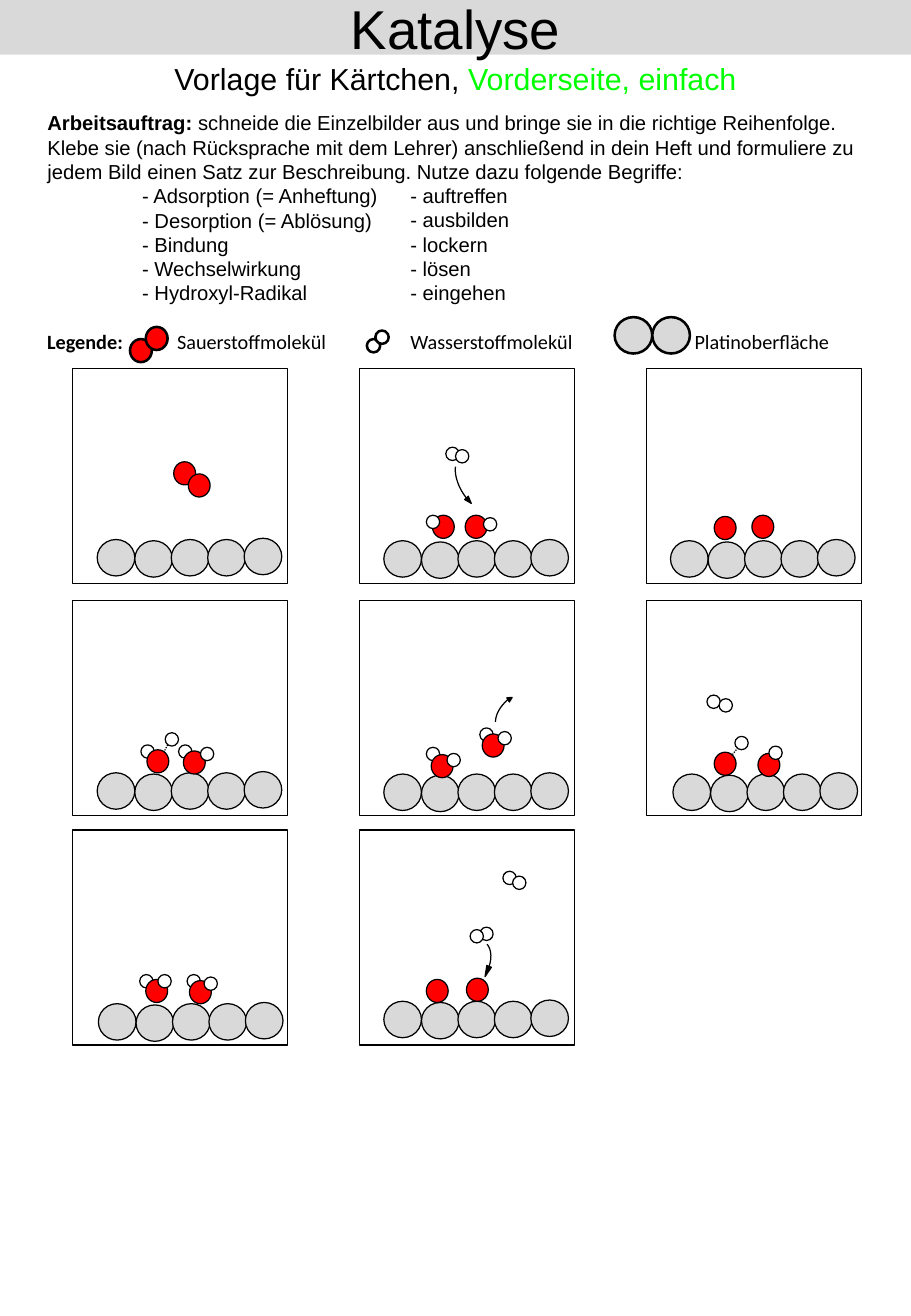
from pptx import Presentation
from pptx.dml.color import RGBColor
from pptx.enum.dml import MSO_LINE
from pptx.enum.shapes import MSO_CONNECTOR, MSO_SHAPE
from pptx.enum.text import MSO_ANCHOR, MSO_AUTO_SIZE, PP_ALIGN
from pptx.oxml.ns import qn
from pptx.util import Inches, Pt
from lxml import etree

OVAL, RECTANGLE = MSO_SHAPE.OVAL, MSO_SHAPE.RECTANGLE
TRIANGLE = MSO_SHAPE.ISOSCELES_TRIANGLE
STRAIGHT, DOTTED = MSO_CONNECTOR.STRAIGHT, MSO_LINE.ROUND_DOT
CENTER, LEFT = PP_ALIGN.CENTER, PP_ALIGN.LEFT
TOP, MIDDLE = MSO_ANCHOR.TOP, MSO_ANCHOR.MIDDLE
NO_AUTOFIT = MSO_AUTO_SIZE.NONE

BLACK = RGBColor(0x00, 0x00, 0x00)
WHITE = RGBColor(0xFF, 0xFF, 0xFF)
GRAY = RGBColor(0xD9, 0xD9, 0xD9)
RED = RGBColor(0xFF, 0x00, 0x00)
GREEN = RGBColor(0x00, 0xFF, 0x00)

PAGE_WIDTH, PAGE_HEIGHT = 7.5, 10.83
CARD_SIZE, CARD_LEFT, CARD_PITCH = 1.77, 0.6, 2.36
ROW_TOPS = (3.03, 4.94, 6.83)
TEXT_LEFT, TEXT_TOP, TEXT_WIDTH, TEXT_HEIGHT = 0.29, 0.86, 6.93, 1.72
LINE_POINTS, TASK_LINES, TERM_INDENT, VERB_LEFT = 14.4, 3, 0.78, 3.28
SURFACE = ((0, 0), (0.31, 0.01), (0.61, 0), (0.91, 0), (1.21, -0.01))
ATOMS = {"O": (0.18, 0.19, RED), "H": (0.11, 0.11, WHITE), "Pt": (0.31, 0.3, GRAY)}

TASK = ("schneide die Einzelbilder aus und bringe sie in die richtige Reihenfolge. "
        "Klebe sie (nach Rücksprache mit dem Lehrer) anschließend in dein Heft und "
        "formuliere zu jedem Bild einen Satz zur Beschreibung. "
        "Nutze dazu folgende Begriffe:")
NOUNS = ("Adsorption (= Anheftung)", "Desorption (= Ablösung)", "Bindung",
         "Wechselwirkung", "Hydroxyl-Radikal")
VERBS = ("auftreffen", "ausbilden", "lockern", "lösen", "eingehen")
LEGEND = (("Legende:", 0.29, True), ("Sauerstoffmolekül", 1.36, False),
          ("Wasserstoffmolekül", 3.28, False), ("Platinoberfläche", 5.62, False))
LEGEND_ATOMS = (("O", 1.07, 2.79), ("O", 1.2, 2.69), ("H", 3.02, 2.79), ("H", 3.09, 2.72),
                ("Pt", 5.06, 2.61), ("Pt", 5.37, 2.61))

# Inches from the card's corner; parts are listed from back to front.
CARDS = (
    dict(column=0, row=0, surface=(0.2, 1.41), atoms=(("O", 0.83, 0.77), ("O", 0.95, 0.87))),
    dict(column=1, row=0, surface=(0.2, 1.42),
         atoms=(("H", 0.71, 0.65), ("H", 0.79, 0.67), ("O", 0.6, 1.21), ("O", 0.87, 1.21),
                ("H", 1.02, 1.23), ("H", 0.55, 1.21)),
         curve=((0.79, 0.81), (0.78, 0.89), (0.82, 1), (0.89, 1.08)), pivot=(1.04, 0.94),
         head=(0.88, 1.06, 0.04, 0.06, 138.5)),
    dict(column=2, row=0, surface=(0.2, 1.42), atoms=(("O", 0.56, 1.22), ("O", 0.87, 1.21))),
    dict(column=0, row=1, surface=(0.2, 1.42),
         atoms=(("H", 0.56, 1.19), ("H", 0.87, 1.19), ("O", 0.61, 1.23), ("O", 0.91, 1.24),
                ("H", 0.76, 1.09), ("H", 1.05, 1.21)),
         bond=(0.78, 1.19, 0.75, 1.25)),
    dict(column=1, row=1, surface=(0.2, 1.43),
         atoms=(("H", 0.99, 1.05), ("O", 1.01, 1.1), ("H", 1.14, 1.08), ("H", 0.55, 1.21),
                ("O", 0.59, 1.27), ("H", 0.72, 1.26)),
         curve=((1.12, 1), (1.12, 0.93), (1.17, 0.86), (1.23, 0.81)), pivot=(1.35, 1),
         head=(1.22, 0.79, 0.04, 0.04, 58.3)),
    dict(column=2, row=1, surface=(0.22, 1.43),
         atoms=(("H", 0.5, 0.78), ("H", 0.6, 0.81), ("O", 0.56, 1.25), ("O", 0.92, 1.26),
                ("H", 1.01, 1.2), ("H", 0.73, 1.12)),
         bond=(0.71, 1.27, 0.75, 1.22)),
    dict(column=0, row=2, surface=(0.21, 1.43),
         atoms=(("H", 0.55, 1.19), ("O", 0.6, 1.23), ("H", 0.7, 1.19), ("H", 0.94, 1.19),
                ("O", 0.96, 1.24), ("H", 1.08, 1.21))),
    dict(column=1, row=2, surface=(0.2, 1.41),
         atoms=(("O", 0.88, 1.22), ("O", 0.55, 1.23), ("H", 1.18, 0.34), ("H", 1.26, 0.38),
                ("H", 0.99, 0.8), ("H", 0.91, 0.82)),
         curve=((1.05, 0.94), (1.09, 0.99), (1.09, 1.07), (1.06, 1.14)), pivot=(0.91, 1.08),
         head=(1.03, 1.12, 0.04, 0.09, 201.8)),
)


def place(box, left, top, width, height):
    box.left, box.top = Inches(left), Inches(top)
    box.width, box.height = Inches(width), Inches(height)


def add_figure(shapes, kind, left, top, width, height, fill, weight=0.75, rotation=0):
    figure = shapes.add_shape(kind, Inches(left), Inches(top), Inches(width), Inches(height))
    figure.shadow.inherit = False
    figure.fill.solid()
    figure.fill.fore_color.rgb = fill
    figure.line.color.rgb = BLACK
    figure.line.width = Pt(weight)
    figure.rotation = rotation


def add_atom(shapes, element, left, top, weight=0.75):
    width, height, color = ATOMS[element]
    add_figure(shapes, OVAL, left, top, width, height, color, weight)


def add_bond(shapes, *ends):
    bond = shapes.add_connector(STRAIGHT, *[Inches(value) for value in ends])
    bond.line.color.rgb = BLACK
    bond.line.width = Pt(0.75)
    bond.line.dash_style = DOTTED
    etree.SubElement(bond._element.spPr, qn("a:effectLst"))


def add_curve(shapes, left, top, controls, pivot, steps=12):
    """Draw a cubic Bézier curve as an open outline whose frame reaches its pivot."""
    points = []
    for step in range(steps + 1):
        t = step / steps
        weights = ((1 - t) ** 3, 3 * t * (1 - t) ** 2, 3 * t * t * (1 - t), t ** 3)
        x, y = (sum(w * point[axis] for w, point in zip(weights, controls)) for axis in (0, 1))
        points.append((Inches(left + x), Inches(top + y)))
    builder = shapes.build_freeform(Inches(left + pivot[0]), Inches(top + pivot[1]))
    builder.move_to(*points[0])
    builder.add_line_segments(points[1:], close=False)
    curve = builder.convert_to_shape()
    curve.shadow.inherit = False
    curve.fill.background()
    curve.line.color.rgb = BLACK
    curve.line.width = Pt(0.75)


def add_card(page, column, row, surface, atoms, bond=None, curve=None, pivot=None, head=None):
    shapes = page.shapes.add_group_shape().shapes
    left, top = CARD_LEFT + column * CARD_PITCH, ROW_TOPS[row]
    add_figure(shapes, RECTANGLE, left, top, CARD_SIZE, CARD_SIZE, WHITE)
    for x, y in SURFACE:
        add_atom(shapes, "Pt", left + surface[0] + x, top + surface[1] + y)
    if bond:
        add_bond(shapes, left + bond[0], top + bond[1], left + bond[2], top + bond[3])
    if curve:
        x, y, width, height, rotation = head
        add_curve(shapes, left, top, curve, pivot)
        add_figure(shapes, TRIANGLE, left + x, top + y, width, height, BLACK, rotation=rotation)
    for element, x, y in atoms:
        add_atom(shapes, element, left + x, top + y)


def write(box, paragraphs, size, font="Arial", align=LEFT, anchor=TOP, spacing=None, indent=0):
    """Fill a box with lists of (text, bold, color) spans; indent all but the first."""
    frame = box.text_frame
    frame.word_wrap = True
    frame.auto_size = NO_AUTOFIT
    frame.vertical_anchor = anchor
    for index, spans in enumerate(paragraphs):
        para = frame.add_paragraph() if index else frame.paragraphs[0]
        para.alignment = align
        para.space_before = Pt(0)
        if spacing:
            para.line_spacing = Pt(spacing)
        properties = para._p.get_or_add_pPr()
        properties.set("marL", str(Inches(indent if index else 0)))
        properties.set("indent", "0")
        etree.SubElement(properties, qn("a:buNone"))
        for text, bold, color in spans:
            span = para.add_run()
            span.text = text
            span.font.name, span.font.size = font, Pt(size)
            span.font.bold, span.font.color.rgb = bold, color


def add_text(page, left, top, width, height, paragraphs, size, **options):
    area = [Inches(value) for value in (left, top, width, height)]
    write(page.shapes.add_textbox(*area), paragraphs, size, **options)


def dashed(terms):
    return [[(f"- {term}", False, BLACK)] for term in terms]


def add_headings(page):
    title = page.shapes.title
    place(title, 0, 0, PAGE_WIDTH, 0.45)
    title.fill.solid()
    title.fill.fore_color.rgb = GRAY
    write(title, [[("Katalyse", False, BLACK)]], 32.4, align=CENTER, anchor=MIDDLE)
    add_text(page, 0.6, 0.45, 6.3, 0.4,
             [[("Vorlage für Kärtchen, ", False, BLACK), ("Vorderseite, einfach", False, GREEN)]],
             18, align=CENTER)


def add_task(page):
    body = page.placeholders[1]
    place(body, TEXT_LEFT, TEXT_TOP, TEXT_WIDTH, TEXT_HEIGHT)
    task = [("Arbeitsauftrag: ", True, BLACK), (TASK, False, BLACK)]
    write(body, [task, *dashed(NOUNS)], 12, spacing=LINE_POINTS, indent=TERM_INDENT)
    offset = TASK_LINES * LINE_POINTS / 72
    add_text(page, VERB_LEFT, TEXT_TOP + offset, 1.5, TEXT_HEIGHT - offset, dashed(VERBS), 12,
             spacing=LINE_POINTS)


def add_legend(page):
    for label, left, bold in LEGEND:
        add_text(page, left, 2.66, 1.6, 0.3, [[(label, bold, BLACK)]], 12, font="Calibri")
    for element, left, top in LEGEND_ATOMS:
        add_atom(page.shapes, element, left, top, weight=1.5)


def main():
    deck = Presentation()
    deck.slide_width, deck.slide_height = Inches(PAGE_WIDTH), Inches(PAGE_HEIGHT)
    page = deck.slides.add_slide(deck.slide_layouts[1])
    add_headings(page)
    add_task(page)
    add_legend(page)
    for card in CARDS:
        add_card(page, **card)
    deck.save("out.pptx")


if __name__ == "__main__":
    main()
